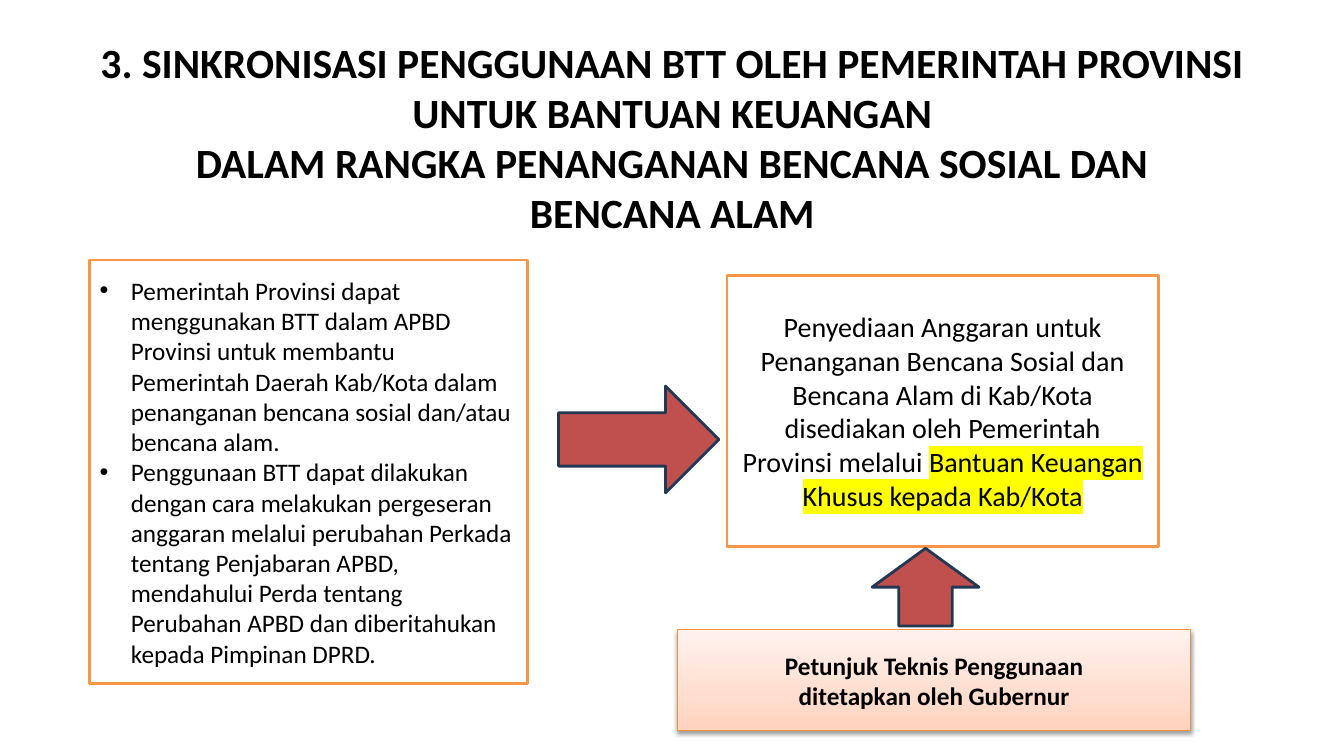
from pptx import Presentation
from pptx import util as u
from pptx.dml.color import RGBColor
from pptx.enum import shapes, text
from pptx.oxml import parse_xml
from pptx.oxml.ns import nsdecls, qn
from lxml import etree

COLORS = {
    "text": "000000", "white": "FFFFFF", "border": "F79646",
    "arrow": "C0504D", "arrow_line": "233953", "note_line": "F69240",
    "highlight": "FFFF00", "shadow": "000000",
}
NOTE_STOPS = [(0, "FFD2BD"), (35, "FFDED0"), (100, "FFF2ED")]
FONT = "Calibri"

TITLE = "\v".join([
    "3. SINKRONISASI PENGGUNAAN BTT OLEH PEMERINTAH PROVINSI",
    "UNTUK BANTUAN KEUANGAN",
    "DALAM RANGKA PENANGANAN BENCANA SOSIAL DAN",
    "BENCANA ALAM",
])
USAGE_RULES = [
    "Pemerintah Provinsi dapat menggunakan BTT dalam APBD Provinsi untuk "
    "membantu Pemerintah Daerah Kab/Kota dalam penanganan bencana sosial "
    "dan/atau bencana alam.",
    "Penggunaan BTT dapat dilakukan dengan cara melakukan pergeseran anggaran "
    "melalui perubahan Perkada tentang Penjabaran APBD, mendahului Perda "
    "tentang Perubahan APBD dan diberitahukan kepada Pimpinan DPRD.",
]
BUDGET = ("Penyediaan Anggaran untuk Penanganan Bencana Sosial dan Bencana Alam "
          "di Kab/Kota disediakan oleh Pemerintah Provinsi melalui ")
BUDGET_KEY = "Bantuan Keuangan Khusus kepada Kab/Kota"
GUIDELINE = ["Petunjuk Teknis Penggunaan", "ditetapkan oleh Gubernur"]


def rgb(name):
    return RGBColor.from_string(COLORS[name])


def format_run(r, size, bold=False):
    r.font.name = FONT
    r.font.size = u.Pt(size)
    r.font.bold = bold
    r.font.color.rgb = rgb("text")


def write(sp, lines, size, bold=False, align=text.PP_ALIGN.CENTER, bullet=False):
    tf = sp.text_frame
    tf.word_wrap = True
    tf.vertical_anchor = text.MSO_ANCHOR.MIDDLE
    tf.text = "\n".join(lines)
    for p in tf.paragraphs:
        p.alignment = align
        if bullet:
            add_bullet(p)
        for r in p.runs:
            format_run(r, size, bold)


def add_bullet(p):
    pPr = p._p.get_or_add_pPr()
    indent = u.Inches(0.31)
    pPr.set("marL", str(indent))
    pPr.set("indent", str(-indent))
    etree.SubElement(pPr, qn("a:buFont")).set("typeface", "Arial")
    etree.SubElement(pPr, qn("a:buChar")).set("char", "•")


def highlight(r):
    rPr = r.font._element
    mark = parse_xml(f'<a:highlight {nsdecls("a")}>'
                     f'<a:srgbClr val="{COLORS["highlight"]}"/></a:highlight>')
    rPr.find(qn("a:solidFill")).addnext(mark)


def add_block(s, kind, box, fill, line, width=2):
    sp = s.shapes.add_shape(kind, *map(u.Inches, box))
    sp.shadow.inherit = False
    sp.fill.solid()
    sp.fill.fore_color.rgb = rgb(fill)
    sp.line.color.rgb = rgb(line)
    sp.line.width = u.Pt(width)
    return sp


def add_gradient_and_shadow(sp):
    spPr = sp._element.spPr
    stops = "".join(f'<a:gs pos="{pos * 1000}"><a:srgbClr val="{color}"/></a:gs>'
                    for pos, color in NOTE_STOPS)
    spPr.replace(spPr.find(qn("a:solidFill")), parse_xml(
        f'<a:gradFill {nsdecls("a")} rotWithShape="1"><a:gsLst>{stops}</a:gsLst>'
        '<a:lin ang="16200000" scaled="1"/></a:gradFill>'))
    spPr.find(qn("a:effectLst")).append(parse_xml(
        f'<a:outerShdw {nsdecls("a")} blurRad="{u.Pt(3.1)}" dist="{u.Pt(1.6)}" '
        f'dir="5400000" rotWithShape="0"><a:srgbClr val="{COLORS["shadow"]}">'
        '<a:alpha val="38000"/></a:srgbClr></a:outerShdw>'))


def main():
    prs = Presentation()
    prs.slide_width, prs.slide_height = u.Inches(13.33), u.Inches(7.5)
    s = prs.slides.add_slide(prs.slide_layouts[6])
    kinds = shapes.MSO_SHAPE

    # Title
    title = s.shapes.add_textbox(*map(u.Inches, (0.67, 0.36, 12, 2)))
    write(title, [TITLE], 29.7, bold=True)

    # Budget provision, ending in a highlighted phrase
    budget = add_block(s, kinds.RECTANGLE, (7.21, 2.73, 4.28, 2.69), "white", "border")
    write(budget, [BUDGET], 20)
    r = budget.text_frame.paragraphs[0].add_run()
    r.text = BUDGET_KEY
    format_run(r, 20)
    highlight(r)

    # Rules for using the funds
    rules = add_block(s, kinds.RECTANGLE, (0.89, 2.58, 4.34, 4.2), "white", "border")
    write(rules, USAGE_RULES, 18, align=text.PP_ALIGN.LEFT, bullet=True)

    # Technical guideline
    note = add_block(s, kinds.RECTANGLE, (6.72, 6.25, 5.09, 1), "white", "note_line", 0.75)
    add_gradient_and_shadow(note)
    write(note, GUIDELINE, 18, bold=True)

    # Arrows towards the budget box
    add_block(s, kinds.RIGHT_ARROW, (5.54, 3.83, 1.59, 1.06), "arrow", "arrow_line")
    add_block(s, kinds.UP_ARROW, (8.65, 5.44, 1.06, 0.77), "arrow", "arrow_line")

    prs.save("out.pptx")


if __name__ == "__main__":
    main()
